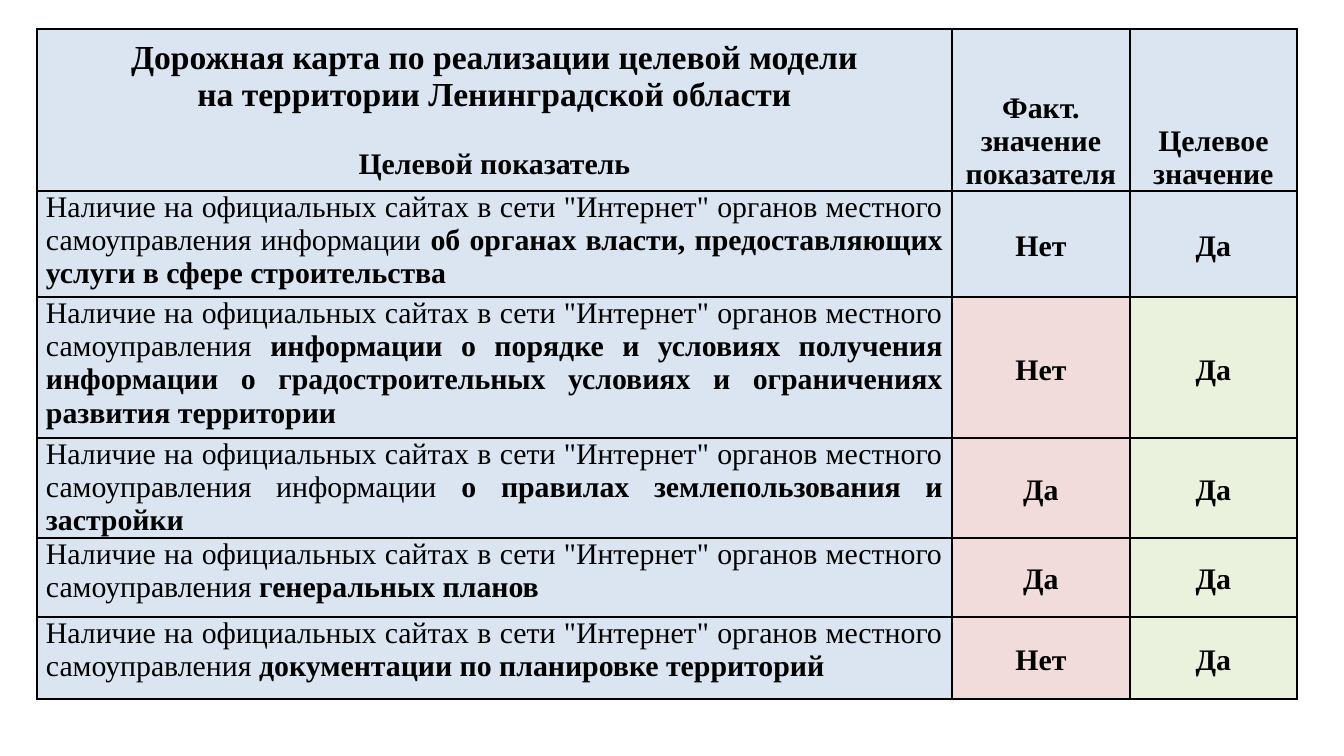
from lxml import etree
from pptx import Presentation
from pptx import util as u
from pptx.dml.color import RGBColor
from pptx.enum import text
from pptx.oxml.ns import qn

PX = 914400 / 134.4
FONT = "Times New Roman"
BLACK = RGBColor(0x00, 0x00, 0x00)
BLUE = RGBColor(0xDB, 0xE5, 0xF1)
PINK = RGBColor(0xF2, 0xDB, 0xDB)
GREEN = RGBColor(0xEA, 0xF1, 0xDD)

COLUMN_WIDTHS = [915, 178, 167]
ROW_HEIGHTS = [162, 106, 141, 100, 79, 82]
TOP, MIDDLE, BOTTOM = (text.MSO_ANCHOR.TOP, text.MSO_ANCHOR.MIDDLE,
                       text.MSO_ANCHOR.BOTTOM)
CENTERED = {"alignment": text.PP_ALIGN.CENTER}
VALUE = {**CENTERED, "line_spacing": 1.15}
JUSTIFIED = {"alignment": text.PP_ALIGN.JUSTIFY}
AFTER_GAP = {**CENTERED, "space_before": u.Pt(18)}

SITES = ('Наличие на официальных сайтах в сети "Интернет" '
         "органов местного самоуправления ")
# Plain ending, bold subject, actual value, target value, fills of the values
INDICATORS = [
    ("информации ", "об органах власти, предоставляющих услуги в сфере "
     "строительства", "Нет", "Да", BLUE, BLUE),
    ("", "информации о порядке и условиях получения информации о "
     "градостроительных условиях и ограничениях развития территории",
     "Нет", "Да", PINK, GREEN),
    ("информации ", "о правилах землепользования и застройки",
     "Да", "Да", PINK, GREEN),
    ("", "генеральных планов", "Да", "Да", PINK, GREEN),
    ("", "документации по планировке территорий", "Нет", "Да", PINK, GREEN),
]


def px(length):
    return u.Emu(round(length * PX))


def apply(target, values):
    for name, value in values.items():
        setattr(target, name, value)


def add_borders(cell):
    """Put a thin black line on all four sides, ahead of the cell's fill."""
    properties = cell._tc.get_or_add_tcPr()
    for position, side in enumerate(("a:lnL", "a:lnR", "a:lnT", "a:lnB")):
        line = etree.Element(qn(side), w=str(u.Pt(1)))
        fill = etree.SubElement(line, qn("a:solidFill"))
        etree.SubElement(fill, qn("a:srgbClr"), val=str(BLACK))
        properties.insert(position, line)


def format_cell(cell, fill, anchor):
    apply(cell, {"margin_left": px(9), "margin_right": px(9), "margin_top": 0,
                 "margin_bottom": 0, "vertical_anchor": anchor})
    cell.fill.solid()
    cell.fill.fore_color.rgb = fill
    add_borders(cell)


def write_paragraph(paragraph, runs, layout, size=16):
    """Write runs given as (wording, bold) pairs."""
    apply(paragraph, layout)
    for wording, bold in runs:
        run = paragraph.add_run()
        run.text = wording
        apply(run.font, {"name": FONT, "size": u.Pt(size), "bold": bold})
        run.font.color.rgb = BLACK


def write_lines(cell, lines):
    """Write bold paragraphs given as (wording, layout, size)."""
    frame = cell.text_frame
    for index, (wording, layout, size) in enumerate(lines):
        paragraph = frame.add_paragraph() if index else frame.paragraphs[0]
        write_paragraph(paragraph, [(wording, True)], layout, size)


def fill_header(table):
    headings = [
        (MIDDLE, [
            ("Дорожная карта по реализации целевой модели", CENTERED, 18),
            ("на территории Ленинградской области", CENTERED, 18),
            ("Целевой показатель", AFTER_GAP, 16)]),
        (BOTTOM, [("Факт. значение показателя", CENTERED, 16)]),
        (BOTTOM, [("Целевое", CENTERED, 16), ("значение", CENTERED, 16)]),
    ]
    for column, (anchor, lines) in enumerate(headings):
        cell = table.cell(0, column)
        format_cell(cell, BLUE, anchor)
        write_lines(cell, lines)


def fill_indicator(table, row, indicator):
    ending, subject, actual, target, actual_fill, target_fill = indicator
    description = table.cell(row, 0)
    format_cell(description, BLUE, TOP)
    write_paragraph(description.text_frame.paragraphs[0],
                    [(SITES + ending, False), (subject, True)], JUSTIFIED)
    values = [(actual, actual_fill), (target, target_fill)]
    for column, (value, fill) in enumerate(values, 1):
        cell = table.cell(row, column)
        format_cell(cell, fill, MIDDLE)
        write_lines(cell, [(value, VALUE, 16)])


def add_roadmap(slide):
    table = slide.shapes.add_table(
        len(ROW_HEIGHTS), len(COLUMN_WIDTHS), px(37), px(29),
        px(sum(COLUMN_WIDTHS)), px(sum(ROW_HEIGHTS))).table
    apply(table, {"first_row": False, "horz_banding": False})
    for column, width in zip(table.columns, COLUMN_WIDTHS):
        column.width = px(width)
    for row, height in zip(table.rows, ROW_HEIGHTS):
        row.height = px(height)
    fill_header(table)
    for row, indicator in enumerate(INDICATORS, 1):
        fill_indicator(table, row, indicator)


def main():
    deck = Presentation()
    apply(deck, {"slide_width": px(1344), "slide_height": px(756)})
    blank_layout = deck.slide_layouts[6]
    add_roadmap(deck.slides.add_slide(blank_layout))
    deck.save("out.pptx")


if __name__ == "__main__":
    main()
